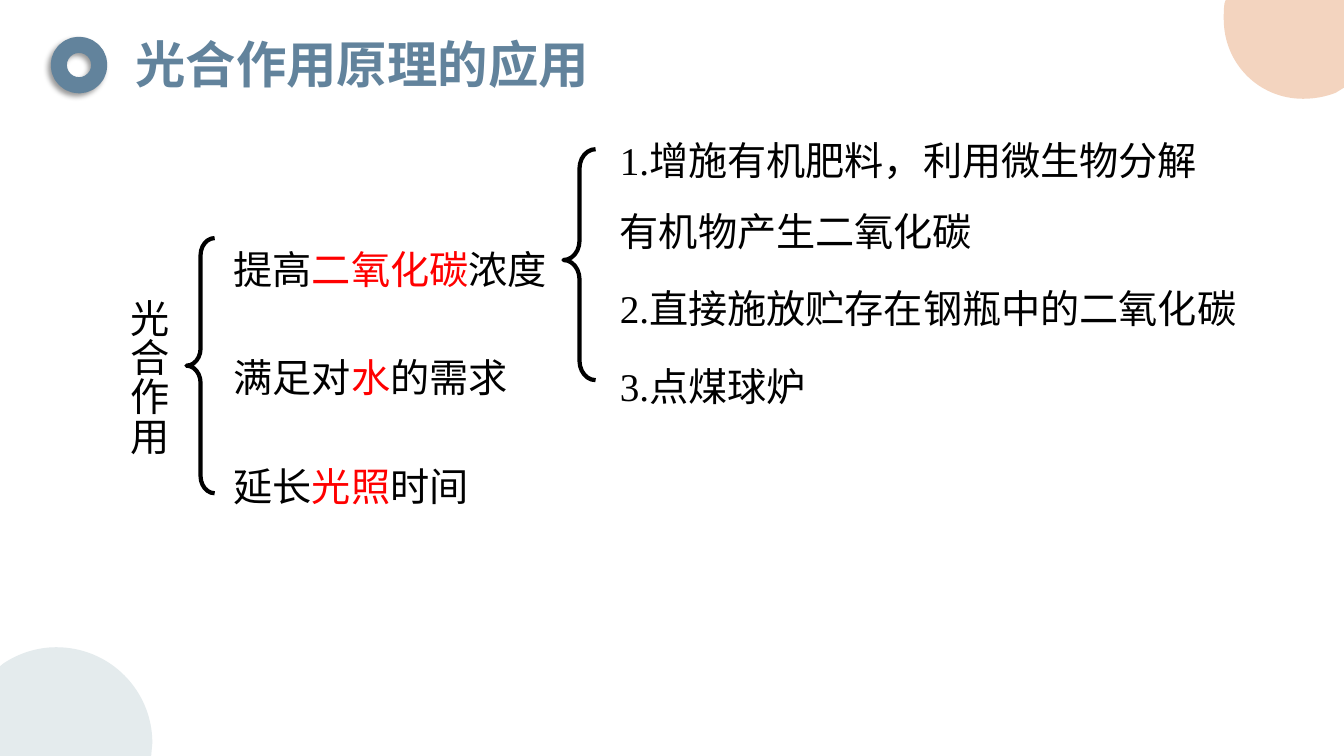
from lxml import etree
from pptx import Presentation
from pptx import util as u
from pptx.dml.color import RGBColor
from pptx.enum import shapes, text
from pptx.oxml import parse_xml
from pptx.oxml.ns import nsdecls, qn

THEME = {
    "blue": "62839C", "peach": "F3D4BF", "mist": "E4EBED",
    "black": "000000", "red": "FF0000",
    "title_size": 36, "body_size": 28,
    "chinese_font": "Noto Sans CJK SC", "latin_font": "Times New Roman",
}
TITLE = {"name": THEME["chinese_font"], "size": u.Pt(THEME["title_size"]), "bold": True}
BODY = {"name": THEME["latin_font"], "size": u.Pt(THEME["body_size"])}


def color(key):
    return RGBColor.from_string(THEME[key])


def add_text(box, runs, font_format, spacing=1.5):
    frame = slide.shapes.add_textbox(*map(u.Cm, box)).text_frame
    frame.word_wrap = True
    frame.auto_size = text.MSO_AUTO_SIZE.SHAPE_TO_FIT_TEXT
    line = frame.paragraphs[0]
    line.line_spacing = spacing
    for words, key in runs:
        run = line.add_run()
        run.text = words
        for attribute, value in font_format.items():
            setattr(run.font, attribute, value)
        run.font.color.rgb = color(key)
        east_asian = etree.SubElement(run.font._element, qn("a:ea"))
        east_asian.set("typeface", THEME["chinese_font"])
    return frame


deck = Presentation()
deck.slide_width, deck.slide_height = u.Cm(33.87), u.Cm(19.05)
slide = deck.slides.add_slide(deck.slide_layouts[6])

ring = slide.shapes.add_shape(shapes.MSO_SHAPE.OVAL, *map(u.Cm, (1.48, 1.13, 1.02, 1.02)))
ring.rotation = 119.1
ring.fill.background()
ring.line.color.rgb = color("blue")
ring.line.width = u.Pt(11.5)
ring._element.spPr.append(parse_xml(
    f'<a:effectLst {nsdecls("a")}><a:outerShdw blurRad="50800" dist="38100" '
    'dir="8100000" algn="tr" rotWithShape="0"><a:srgbClr val="000000">'
    '<a:alpha val="40000"/></a:srgbClr></a:outerShdw></a:effectLst>'))

corners = [
    ("peach", (30.89, 0), [
        [(33.87, 0)],
        [(33.87, 2.21)],
        [(33.66, 2.34)],
        [(33.4, 2.44), (33.12, 2.49), (32.84, 2.49)],
        [(31.72, 2.49), (30.84, 1.6), (30.84, 0.48)],
        [(30.84, 0.33), (30.84, 0.2), (30.86, 0.08)],
    ]),
    ("mist", (1.42, 16.31), [
        [(2.77, 16.31), (3.84, 17.4), (3.84, 18.72)],
        [(3.81, 19.05)],
        [(0, 19.05)],
        [(0, 16.79)],
        [(0.1, 16.71)],
        [(0.48, 16.46), (0.94, 16.31), (1.42, 16.31)],
    ]),
]
for key, start, segments in corners:
    outline = slide.shapes.build_freeform(*map(u.Cm, start))
    outline.add_line_segments([tuple(map(u.Cm, point)) for segment in segments for point in segment])
    corner = outline.convert_to_shape()
    steps = iter(list(corner._element.iter(qn("a:lnTo"))))
    for segment in segments:
        step = next(steps)
        if len(segment) == 3:
            step.tag = qn("a:cubicBezTo")
            for _ in range(2):
                step.append(next(steps))
            for joined in step.findall(qn("a:lnTo")):
                step.append(joined[0])
                step.remove(joined)
    corner.shadow.inherit = False
    corner.fill.solid()
    corner.fill.fore_color.rgb = color(key)
    corner.line.fill.background()

add_text((3.16, 0.72, 24.59, 1.8), [("光合作用原理的应用", "blue")], TITLE, 1)

process = add_text((2.98, 7.29, 2.08, 5.46), [("光合作用", "black")], BODY)
process._txBody.bodyPr.set("vert", "eaVert")

measures = [
    (8.81, "提高", "二氧化碳", "浓度"),
    (8, "满足对", "水", "的需求"),
    (8, "延长", "光照", "时间"),
]
for row, (width, before, factor, after) in enumerate(measures):
    add_text((5.64, 5.46 + row * 2.73, width, 1.83),
             [(before, "black"), (factor, "red"), (after, "black")], BODY)

methods = [
    (2.72, 15.88, 3.84, "1.增施有机肥料，利用微生物分解有机物产生二氧化碳"),
    (6.45, 16.69, 2.06, "2.直接施放贮存在钢瓶中的二氧化碳"),
    (8.41, 6.83, 2.06, "3.点煤球炉"),
]
for top, width, height, method in methods:
    add_text((15.37, top, width, height), [(method, "black")], BODY)

braces = [
    ((4.7, 6, 0.71, 6.43), (0.61, 0.5)),
    ((14.2, 3.76, 0.81, 5.82), (0.6, 0.48)),
]
for box, proportions in braces:
    brace = slide.shapes.add_shape(shapes.MSO_SHAPE.LEFT_BRACE, *map(u.Cm, box))
    brace.shadow.inherit = False
    brace.fill.background()
    brace.line.color.rgb = color("black")
    brace.line.width = u.Pt(3)
    for index, proportion in enumerate(proportions):
        brace.adjustments[index] = proportion

deck.save("out.pptx")
